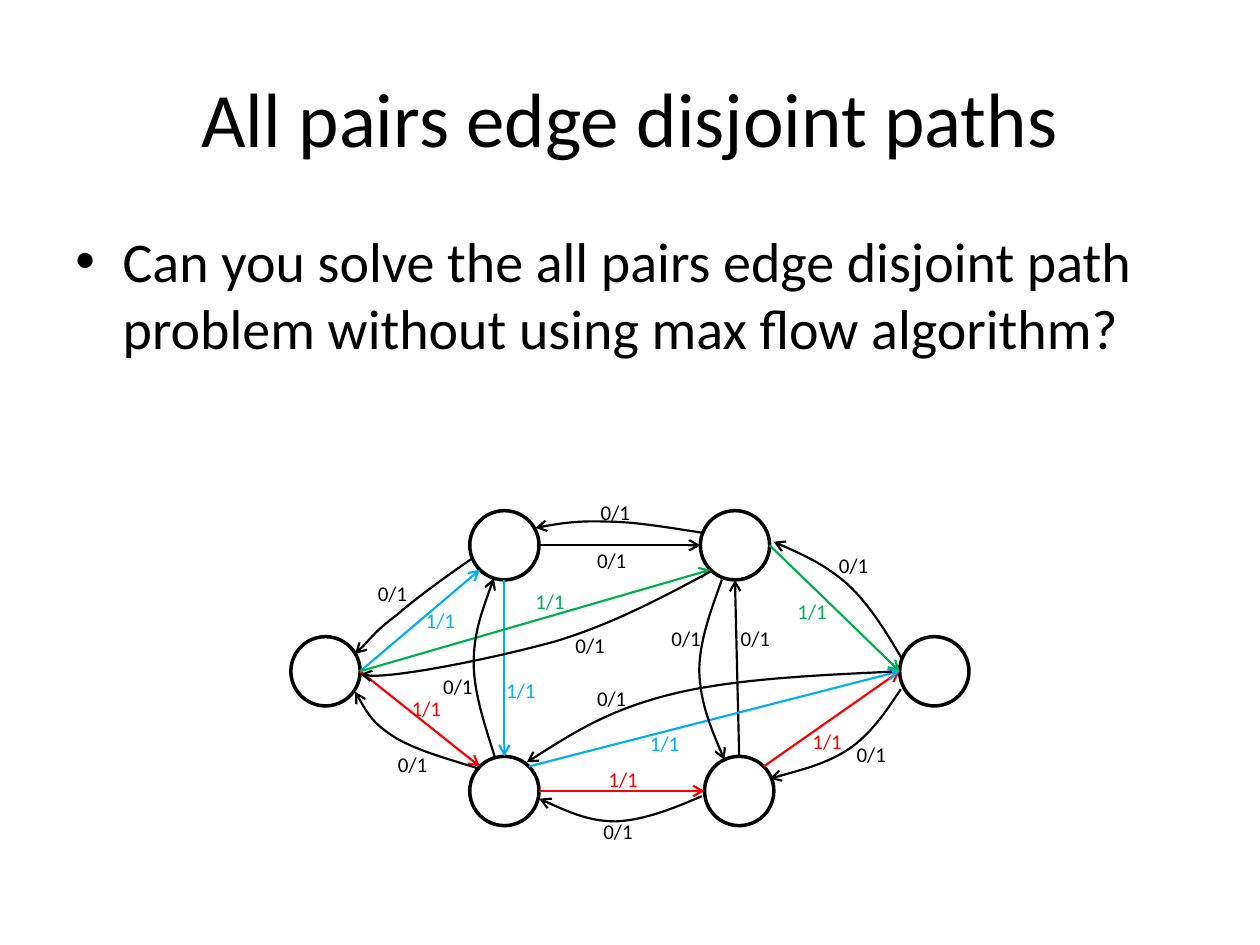
"""Build a slide that shows edge disjoint paths on a flow network."""
from dataclasses import dataclass
from math import cos, radians, sin

from lxml import etree
from pptx import Presentation
from pptx.dml.color import RGBColor
from pptx.enum.shapes import MSO_CONNECTOR, MSO_SHAPE
from pptx.enum.text import MSO_ANCHOR, MSO_AUTO_SIZE, PP_ALIGN
from pptx.oxml.ns import qn
from pptx.util import Pt

STRAIGHT = MSO_CONNECTOR.STRAIGHT
ELLIPSE = MSO_SHAPE.OVAL
MIDDLE = MSO_ANCHOR.MIDDLE
TOP = MSO_ANCHOR.TOP
CENTER = PP_ALIGN.CENTER
LEFT = PP_ALIGN.LEFT
FIT_SHAPE = MSO_AUTO_SIZE.SHAPE_TO_FIT_TEXT
NO_FIT = MSO_AUTO_SIZE.NONE


@dataclass(frozen=True)
class Theme:
    """Colours, type sizes and line widths of the slide."""
    font: str = "Calibri"
    black: RGBColor = RGBColor(0, 0, 0)
    blue: RGBColor = RGBColor(0x00, 0xB0, 0xF0)
    green: RGBColor = RGBColor(0x00, 0xB0, 0x50)
    red: RGBColor = RGBColor(0xFF, 0, 0)
    title_size: float = 44
    body_size: float = 32
    label_size: float = 12
    node_line: float = 2
    edge_line: float = 1.25


THEME = Theme()
DIAMETER = 39.6
LABEL_SIZE = (31.7, 21.6)
BULLET_INDENT = 27

NODES = {
    "top left": (288.2, 311.6),
    "left": (186, 383.6),
    "bottom left": (288.2, 452),
    "top right": (420, 311.6),
    "bottom right": (422.4, 452),
    "right": (533.9, 383.6),
}

STRAIGHT_EDGES = [
    ("left", 0, "top left", 225, "1/1", THEME.blue, (236.2, 343.4)),
    ("top left", 0, "top right", 180, "0/1", THEME.black, (334.1, 309.6)),
    ("top left", 270, "bottom left", 90, "1/1", THEME.blue, (282.2, 383.8)),
    ("left", 0, "bottom left", 135, "1/1", THEME.red, (228.2, 393.8)),
    ("bottom right", 45, "right", 180, "1/1", THEME.red, (457.2, 412.6)),
    ("top right", 0, "right", 180, "1/1", THEME.green, (448.6, 338.4)),
    ("bottom left", 0, "bottom right", 180, "1/1", THEME.red, (340.6, 434.2)),
    ("bottom right", 90, "top right", 270, "0/1", THEME.black, (416.2, 354.2)),
    ("left", 0, "top right", 225, "1/1", THEME.green, (298.8, 332.6)),
    ("bottom left", 45, "right", 180, "1/1", THEME.blue, (364.3, 414)),
]

CURVED_EDGES = [
    ([(270, 319), (253.4, 330.5), (237.6, 342), (226.8, 351.4),
      (215.3, 360), (203.8, 373.7), (203, 373.7)], (208.8, 328.3)),
    ([(402.5, 304.6), (383, 301.7), (362.9, 298.1), (347, 298.1),
      (330.5, 297.4), (312.5, 300.2), (306, 301.7)], (336.2, 282.2)),
    ([(514.8, 393.8), (506.2, 406.8), (497.5, 419.8), (484.6, 428.4),
      (472.3, 436.3), (455.8, 440.6), (439.9, 445)], (482.4, 420.5)),
    ([(412.6, 331.2), (406.1, 349.2), (399.6, 366.5), (399.6, 383.8),
      (400.3, 401), (406.8, 417.6), (414, 434.2)], (376.6, 354.2)),
    ([(283, 433.4), (277.2, 414.7), (270.7, 396), (270.7, 378.7),
      (270.7, 362.2), (276.5, 346.3), (282.2, 330.5)], (246.2, 381.6)),
    ([(273.6, 439.2), (254.9, 433.4), (236.9, 428.4), (225.4, 421.2),
      (213.1, 413.3), (208.1, 404.6), (203, 395.3)], (220.3, 426.2)),
    ([(406.8, 326.2), (378.7, 341.3), (350.6, 356.4), (317.5, 366.5),
      (283.7, 375.8), (213.1, 390.2), (205.9, 385.2)], (321.8, 357.8)),
    ([(509.8, 383.8), (464.4, 385.9), (418.3, 388.1), (383.8, 396.7),
      (348.5, 405.4), (324.7, 420.5), (301, 435.6)], (334.1, 388.1)),
    ([(401, 455), (384.5, 462.2), (367.9, 468.7), (352.1, 469.4),
      (337, 469.4), (322.6, 463), (308.2, 456.5)], (337.7, 464.4)),
    ([(515.5, 376.6), (506.2, 360.7), (496.8, 345.6), (484.6, 334.1),
      (472.3, 323.3), (457.2, 316.1), (442.1, 309.6)], (472.3, 312.5)),
]


def place(shape, left, top, width, height):
    """Set the position and size of a shape in points."""
    shape.left, shape.top = Pt(left), Pt(top)
    shape.width, shape.height = Pt(width), Pt(height)


def write_text(shape, text, size, color, align=LEFT, anchor=TOP):
    """Write one run of text into a shape and return its paragraph."""
    shape.text_frame.vertical_anchor = anchor
    paragraph = shape.text_frame.paragraphs[0]
    paragraph.alignment = align
    run = paragraph.add_run()
    run.text = text
    run.font.name = THEME.font
    run.font.size = Pt(size)
    run.font.color.rgb = color
    return paragraph


def add_title(slide, text):
    """Place and fill the title placeholder."""
    title = slide.shapes.title
    place(title, 36, 21.6, 648, 90)
    title.text_frame.auto_size = NO_FIT
    write_text(title, text, THEME.title_size, THEME.black, CENTER, MIDDLE)


def add_bullet(slide, text):
    """Add the body text as a bullet with a hanging indent."""
    box = slide.shapes.add_textbox(Pt(36), Pt(126), Pt(648), Pt(356.4))
    box.text_frame.word_wrap = True
    paragraph = write_text(box, text, THEME.body_size, THEME.black)
    paragraph.space_before = Pt(0.2 * THEME.body_size)
    properties = paragraph._p.get_or_add_pPr()
    properties.set("marL", str(Pt(BULLET_INDENT)))
    properties.set("indent", str(-Pt(BULLET_INDENT)))
    etree.SubElement(properties, qn("a:buFont"), typeface="Arial")
    etree.SubElement(properties, qn("a:buChar"), char="•")


def add_node(slide, center):
    """Add one open circle around its centre."""
    left, top = (value - DIAMETER / 2 for value in center)
    node = slide.shapes.add_shape(ELLIPSE, Pt(left), Pt(top), Pt(DIAMETER), Pt(DIAMETER))
    node.shadow.inherit = False
    node.fill.background()
    node.line.color.rgb = THEME.black
    node.line.width = Pt(THEME.node_line)


def style_edge(edge, color):
    """Give an edge its colour, width and end arrowhead."""
    edge.line.color.rgb = color
    edge.line.width = Pt(THEME.edge_line)
    outline = edge.element.spPr.find(qn("a:ln"))
    etree.SubElement(outline, qn("a:tailEnd"), type="arrow")


def rim_point(name, angle):
    """Return the point on a node's rim at a counterclockwise angle."""
    x, y = NODES[name]
    radius = DIAMETER / 2
    return Pt(x + radius * cos(radians(angle))), Pt(y - radius * sin(radians(angle)))


def add_straight_edge(slide, start, end, color):
    """Add a straight arrow between two rim points."""
    edge = slide.shapes.add_connector(STRAIGHT, *start, *end)
    style_edge(edge, color)
    etree.SubElement(edge.element.spPr, qn("a:effectLst"))


def add_curved_edge(slide, points, color):
    """Add an arrow of cubic curves, three points to each curve."""
    start, *others = [(Pt(x), Pt(y)) for x, y in points]
    builder = slide.shapes.build_freeform(*start)
    builder.add_line_segments(others, close=False)
    edge = builder.convert_to_shape()
    edge.shadow.inherit = False
    edge.fill.background()
    style_edge(edge, color)
    outline = edge.element.find(".//" + qn("a:path"))
    segments = outline.findall(qn("a:lnTo"))
    for first in range(0, len(segments), 3):
        curve = etree.SubElement(outline, qn("a:cubicBezTo"))
        for segment in segments[first:first + 3]:
            curve.append(segment[0])
            outline.remove(segment)


def add_label(slide, text, position, color):
    """Add a flow label beside an edge."""
    box = slide.shapes.add_textbox(*map(Pt, position + LABEL_SIZE))
    box.text_frame.word_wrap = False
    box.text_frame.auto_size = FIT_SHAPE
    write_text(box, text, THEME.label_size, color)


def main():
    """Build and save the presentation."""
    presentation = Presentation()
    presentation.slide_width, presentation.slide_height = Pt(720), Pt(540)
    slide = presentation.slides.add_slide(presentation.slide_layouts[5])
    add_title(slide, "All pairs edge disjoint paths")
    add_bullet(slide, "Can you solve the all pairs edge disjoint path "
                      "problem without using max flow algorithm?")
    for center in NODES.values():
        add_node(slide, center)
    for source, exit_angle, target, entry_angle, flow, color, position in STRAIGHT_EDGES:
        add_straight_edge(slide, rim_point(source, exit_angle),
                          rim_point(target, entry_angle), color)
        add_label(slide, flow, position, color)
    for points, position in CURVED_EDGES:
        add_curved_edge(slide, points, THEME.black)
        add_label(slide, "0/1", position, THEME.black)
    presentation.save("out.pptx")


if __name__ == "__main__":
    main()
